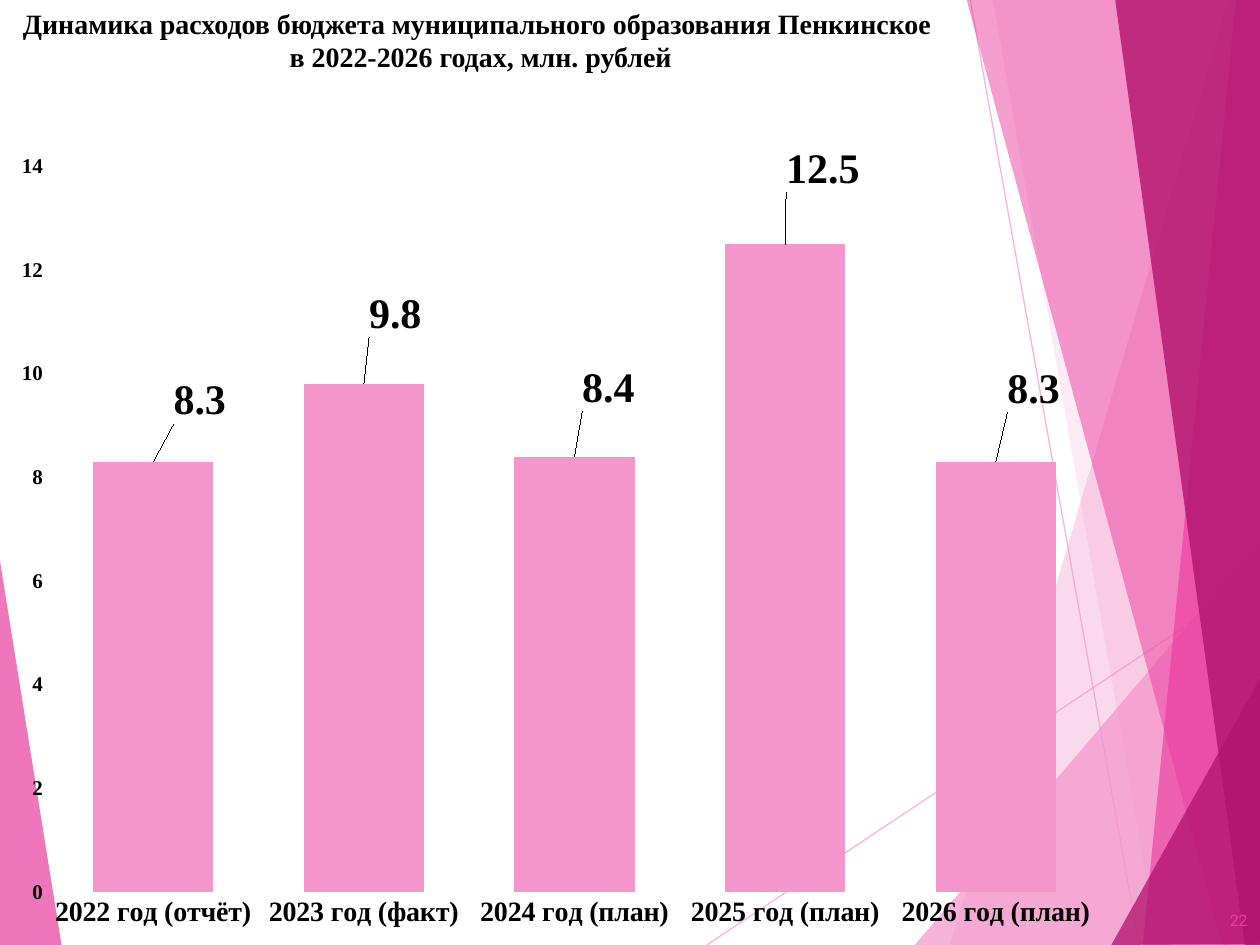
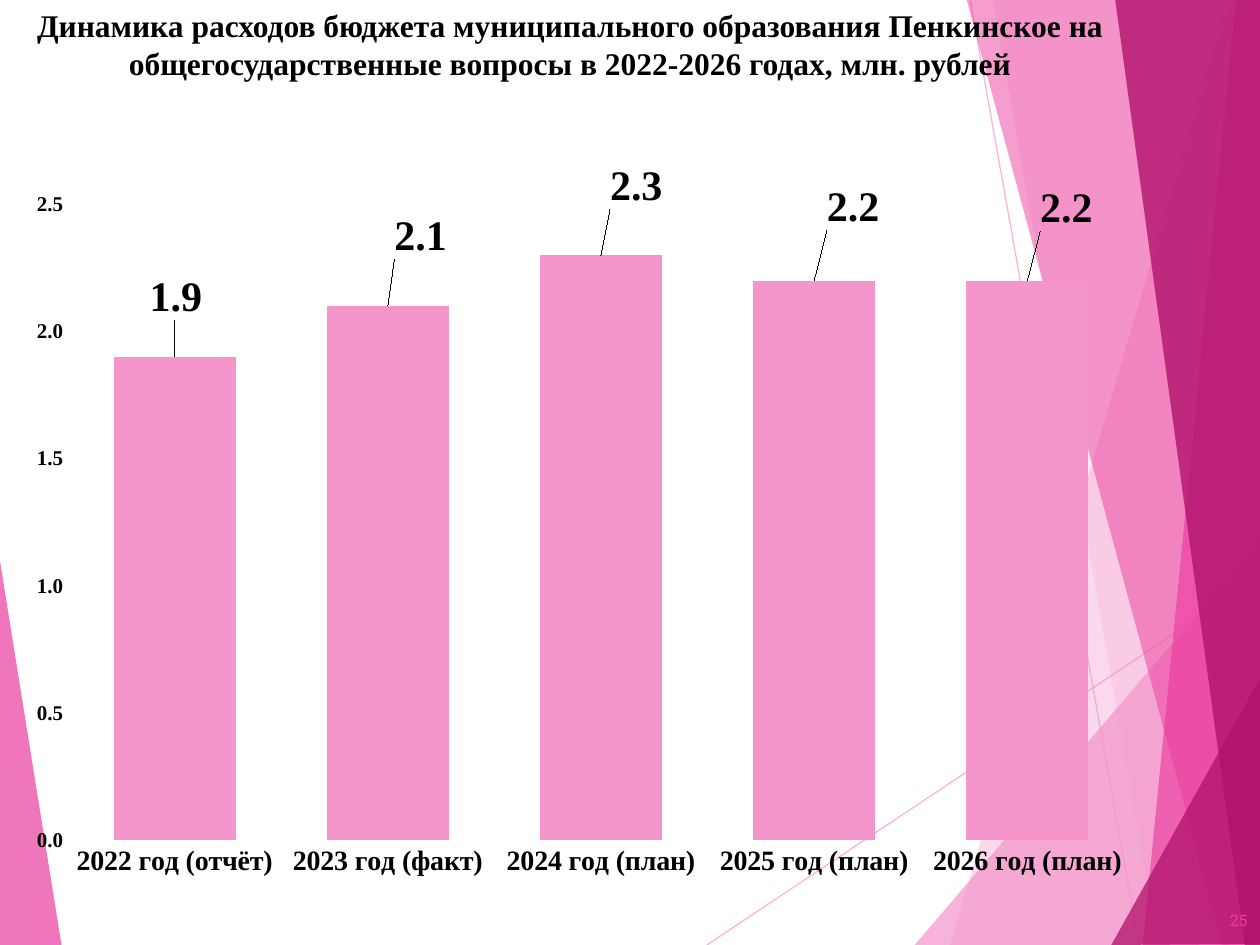
from dataclasses import dataclass

from lxml.etree import SubElement
from pptx import Presentation
from pptx.chart.data import CategoryChartData
from pptx.dml.color import RGBColor
from pptx.enum.chart import XL_CHART_TYPE, XL_LABEL_POSITION, XL_TICK_MARK
from pptx.enum.shapes import MSO_CONNECTOR
from pptx.enum.text import MSO_ANCHOR, MSO_AUTO_SIZE, PP_ALIGN
from pptx.oxml import parse_xml
from pptx.oxml.ns import nsdecls, qn
from pptx.util import Inches, Pt


@dataclass(frozen=True)
class Theme:
    """Colours, fonts and type sizes of the presentation."""

    light: str = "F496CB"
    bright: str = "EB3D9F"
    deep: str = "B2136D"
    ink: str = "000000"
    serif: str = "Times New Roman"
    sans: str = "Roboto"
    label_size: int = 24
    category_size: int = 16
    scale_size: int = 12
    chart_size: int = 10
    number_size: int = 9


THEME = Theme()
YEARS = ["2022 год (отчёт)", "2023 год (факт)", "2024 год (план)",
         "2025 год (план)", "2026 год (план)"]

RAYS = [((5.61, 7.5), (10.01, 4.57)), ((7.7, 0), (9.04, 7.5))]
FACETS = [
    (THEME.light, 36, [(9.75, 0), (7.54, 7.5), (10.02, 7.51), (10.01, 0.01)]),
    (THEME.light, 20, [(7.88, -0.01), (9.19, 7.5), (10.01, 7.5), (10.01, -0.01)]),
    (THEME.light, 72, [(7.26, 7.5), (10, 4.29), (10.01, 7.5)]),
    (THEME.bright, 50, [(7.67, -0.01), (9.7, 7.5), (10.01, 7.49), (10.01, -0.01)]),
    (THEME.bright, 66, [(9.81, -0.01), (9.07, 7.5), (10.01, 7.5), (10, -0.01)]),
    (THEME.deep, 80, [(8.85, -0.01), (9.88, 7.5), (10.02, 7.5), (10, -0.01)]),
    (THEME.deep, 76, [(8.82, 7.5), (10.02, 5.35), (10.02, 7.49)]),
    (THEME.bright, 70, [(-0.01, 4.39), (0.49, 7.51), (-0.01, 7.5)]),
]

BUDGET_SLIDES = [
    dict(
        title="Динамика расходов бюджета муниципального образования Пенкинское "
              "\vв 2022-2026 годах, млн. рублей",
        title_box=(0, 0, 7.63, 1.31), title_size=16, number="22",
        chart_box=(0, 1.1, 8.93, 6.4), plot_box=(0.38, 0.22, 8.36, 5.76),
        spending=[8.3, 9.8, 8.4, 12.5, 8.3], top=14, step=2, number_format="General",
        label_shifts=[(0.37, -0.26), (0.25, -0.33), (0.27, -0.32),
                      (0.3, -0.37), (0.3, -0.35)],
    ),
    dict(
        title="Динамика расходов бюджета муниципального образования Пенкинское на "
              "общегосударственные вопросы в 2022-2026 годах, млн. рублей",
        title_box=(0, 0, 9.05, 0.87), title_size=18, number="25",
        chart_box=(0, 1.29, 9.16, 6.12), plot_box=(0.54, 0.33, 8.46, 5.05),
        spending=[1.9, 2.1, 2.3, 2.2, 2.2], top=2.5, step=0.5, number_format="0.0",
        label_shifts=[(0.01, -0.25), (0.26, -0.33), (0.28, -0.32),
                      (0.31, -0.36), (0.31, -0.35)],
    ),
]


def assign(target, **values):
    """Set every given attribute on the target."""
    for attribute, value in values.items():
        setattr(target, attribute, value)


def style_font(font, size, color=THEME.ink, name=THEME.serif, bold=True):
    """Apply size, colour, family and weight to a font."""
    assign(font, size=Pt(size), name=name, bold=bold)
    font.color.rgb = RGBColor.from_string(color)


def paint(fill, color):
    """Give a fill one solid colour."""
    fill.solid()
    fill.fore_color.rgb = RGBColor.from_string(color)


def fade(shape, opacity):
    """Set the opacity in percent of every colour in the shape's properties."""
    for color in shape.element.spPr.iter(qn("a:srgbClr")):
        SubElement(color, qn("a:alpha"), val=str(opacity * 1000))


def add_ray(slide, start, end):
    """Draw one thin translucent line."""
    ray = slide.shapes.add_connector(
        MSO_CONNECTOR.STRAIGHT, *(Inches(value) for value in start + end))
    ray.line.width = Pt(0.75)
    paint(ray.line.fill, THEME.light)
    fade(ray, 70)
    SubElement(ray.element.spPr, qn("a:effectLst"))
    return ray


def add_facet(slide, color, opacity, corners):
    """Draw one translucent polygon."""
    first, *others = [(Inches(x), Inches(y)) for x, y in corners]
    outline = slide.shapes.build_freeform(*first)
    outline.add_line_segments(others, close=True)
    facet = outline.convert_to_shape()
    paint(facet.fill, color)
    facet.line.fill.background()
    facet.shadow.inherit = False
    fade(facet, opacity)
    return facet


def decorate_layout(layout, slide):
    """Build the shared decoration and hand it over to the layout."""
    decoration = [add_ray(slide, *ray) for ray in RAYS]
    decoration += [add_facet(slide, *facet) for facet in FACETS]
    for position, part in enumerate(decoration):
        part.element.find(".//" + qn("p:cNvPr")).set("id", str(100 + position))
        layout.shapes.element.insert(2 + position, part.element)


def set_title(slide, text, box, size):
    """Place and format the title placeholder."""
    title = slide.shapes.title
    assign(title, **dict(zip(("left", "top", "width", "height"), map(Inches, box))))
    assign(title.text_frame, text=text, word_wrap=True,
           auto_size=MSO_AUTO_SIZE.NONE, vertical_anchor=MSO_ANCHOR.TOP)
    heading = title.text_frame.paragraphs[0]
    heading.alignment = PP_ALIGN.CENTER
    for run in heading.runs:
        style_font(run.font, size)


def add_page_number(slide, number):
    """Write the page number in the lower right corner."""
    corner = slide.shapes.add_textbox(*map(Inches, (9.53, 7.1, 0.47, 0.4)))
    assign(corner.text_frame, text=number, word_wrap=True,
           vertical_anchor=MSO_ANCHOR.MIDDLE)
    line = corner.text_frame.paragraphs[0]
    line.alignment = PP_ALIGN.RIGHT
    style_font(line.runs[0].font, THEME.number_size, THEME.bright, THEME.sans, False)


def manual_layout(**settings):
    """Return a chart layout element with the given settings."""
    entries = "".join(f'<c:{key} val="{value}"/>' for key, value in settings.items())
    return parse_xml(f'<c:layout {nsdecls("c")}><c:manualLayout>{entries}'
                     "</c:manualLayout></c:layout>")


def clear_fill():
    """Return chart shape properties without fill or line."""
    return parse_xml(f'<c:spPr {nsdecls("c", "a")}><a:noFill/>'
                     "<a:ln><a:noFill/></a:ln></c:spPr>")


def no_leader_lines():
    """Return the label extension that turns leader lines off."""
    return parse_xml(
        f'<c:extLst {nsdecls("c")}><c:ext uri="{{CE6537A1-D6FC-4f65-9D91-7224C49458BB}}" '
        'xmlns:c15="http://schemas.microsoft.com/office/drawing/2012/chart">'
        '<c15:showLeaderLines val="0"/></c:ext></c:extLst>')


def place_plot(chart, plot_box, width, height):
    """Fix the inner plot area, given in inches, and make the chart transparent."""
    area = chart.element.find(".//" + qn("c:plotArea"))
    for automatic in area.findall(qn("c:layout")):
        area.remove(automatic)
    left, top, plot_width, plot_height = plot_box
    area.insert(0, manual_layout(
        layoutTarget="inner", xMode="edge", yMode="edge",
        x=left / width, y=top / height, w=plot_width / width, h=plot_height / height))
    area.append(clear_fill())
    chart.element.find(qn("c:txPr")).addprevious(clear_fill())


def style_axis(axis, size):
    """Keep only bold axis labels."""
    assign(axis, has_major_gridlines=False, major_tick_mark=XL_TICK_MARK.NONE,
           minor_tick_mark=XL_TICK_MARK.NONE)
    axis.format.line.fill.background()
    style_font(axis.tick_labels.font, size)


def label_columns(chart, shifts, width, height, number_format):
    """Show the values, each shifted in inches from the top of its column."""
    series = chart.plots[0].series[0]
    labels = series.data_labels
    assign(labels, show_value=True, number_format=number_format,
           number_format_is_linked=False, position=XL_LABEL_POSITION.OUTSIDE_END)
    style_font(labels.font, THEME.label_size)
    for index in range(len(shifts)):
        label = series.points[index].data_label
        style_font(label.font, THEME.label_size)
        label.position = XL_LABEL_POSITION.OUTSIDE_END
    for label, (right, down) in zip(chart.element.iter(qn("c:dLbl")), shifts):
        label.find(qn("c:idx")).addnext(manual_layout(x=right / width, y=down / height))
    chart.element.find(".//" + qn("c:dLbls")).append(no_leader_lines())


def add_spending_chart(slide, chart_box, plot_box, spending, top, step,
                       number_format, label_shifts):
    """Add the column chart of yearly spending."""
    years = CategoryChartData(number_format=number_format)
    years.categories = YEARS
    years.add_series("Series 1", spending)
    chart = slide.shapes.add_chart(
        XL_CHART_TYPE.COLUMN_CLUSTERED, *map(Inches, chart_box), years).chart
    assign(chart, has_legend=False, has_title=False)
    style_font(chart.font, THEME.chart_size, name=THEME.sans, bold=False)
    assign(chart.plots[0], gap_width=75, vary_by_categories=False)
    paint(chart.plots[0].series[0].format.fill, THEME.light)
    style_axis(chart.category_axis, THEME.category_size)
    style_axis(chart.value_axis, THEME.scale_size)
    assign(chart.value_axis, minimum_scale=0, maximum_scale=top, major_unit=step)
    assign(chart.value_axis.tick_labels, number_format=number_format,
           number_format_is_linked=False)
    width, height = chart_box[2:]
    label_columns(chart, label_shifts, width, height, number_format)
    place_plot(chart, plot_box, width, height)


def add_budget_slide(deck, layout, title, title_box, title_size, number, **spending):
    """Add one slide with a title, a spending chart and a page number."""
    slide = deck.slides.add_slide(layout)
    set_title(slide, title, title_box, title_size)
    add_spending_chart(slide, **spending)
    add_page_number(slide, number)
    return slide


def main():
    """Build and save the presentation."""
    deck = Presentation()
    assign(deck, slide_width=Inches(10), slide_height=Inches(7.5))
    layout = deck.slide_layouts.get_by_name("Title Only")
    slides = [add_budget_slide(deck, layout, **content) for content in BUDGET_SLIDES]
    decorate_layout(layout, slides[0])
    deck.save("out.pptx")


if __name__ == "__main__":
    main()
